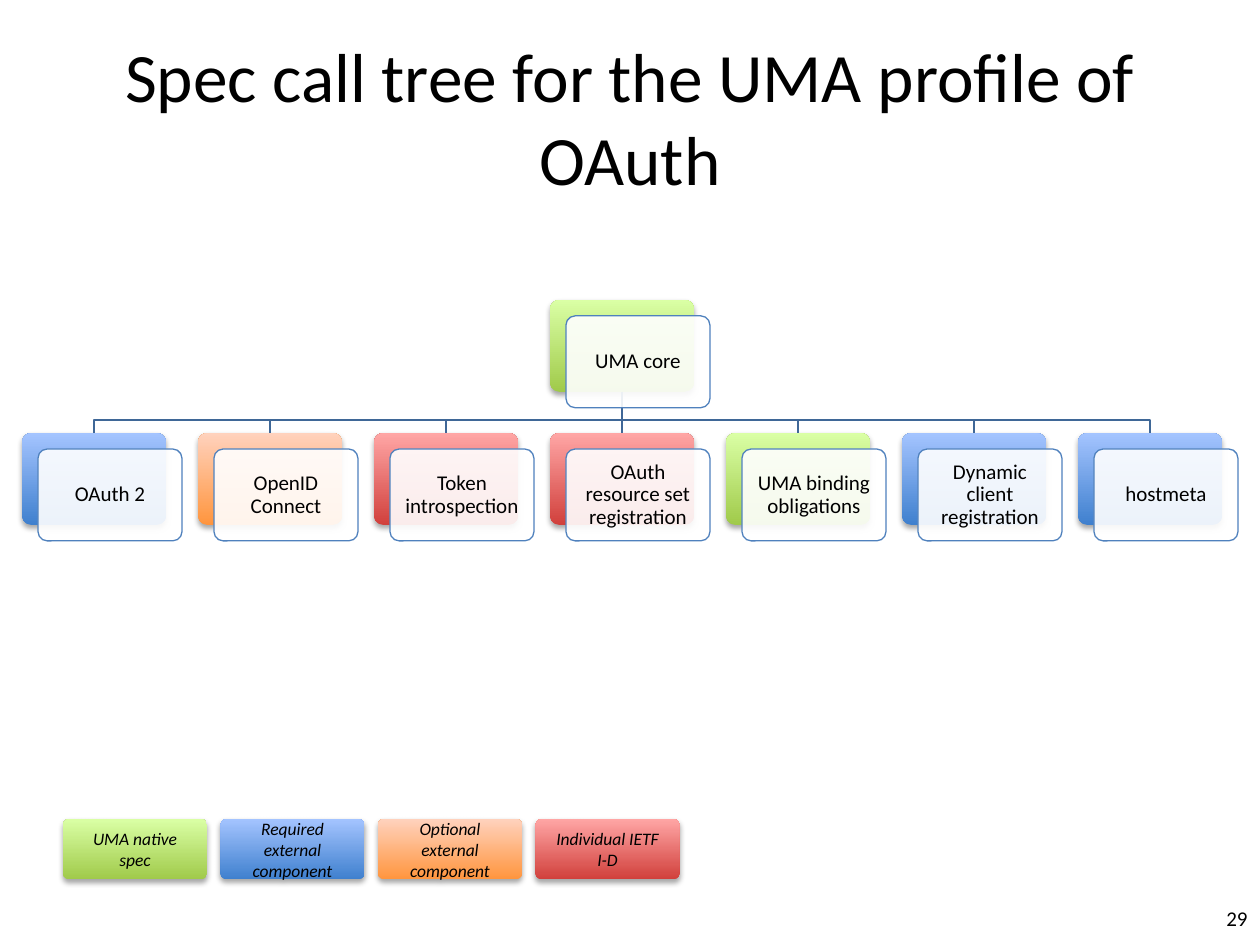
from lxml import etree
from pptx import Presentation
from pptx.dml.color import RGBColor as Rgb
from pptx.enum.shapes import MSO_CONNECTOR as Conn, MSO_SHAPE as Form
from pptx.enum.text import MSO_ANCHOR as Anchor, PP_ALIGN as Align
from pptx.oxml import parse_xml
from pptx.oxml.ns import nsdecls, qn
from pptx.util import Pt

# Content
TITLE = "Spec call tree for the UMA profile of OAuth"
PAGE = "29"
ROOT = ("UMA core", "native")
SPECS = [
    ("OAuth 2", "required"),
    ("OpenID Connect", "optional"),
    ("Token introspection", "draft"),
    ("OAuth resource set registration", "draft"),
    ("UMA binding obligations", "native"),
    ("Dynamic client registration", "required"),
    ("hostmeta", "required"),
]
LEGEND = [
    ("UMA native spec", "native"),
    ("Required external component", "required"),
    ("Optional external component", "optional"),
    ("Individual IETF I-D", "draft"),
]


class Theme:
    font = "Calibri"
    ink, paper = "000000", "FFFFFF"
    line, edge = "3F6797", "4F81BD"
    title, body, key = 39.6, 12, 10
    # Each kind of spec: bottom colour, top colour
    kinds = {
        "native": ("A0CA4A", "DAFFA5"),
        "required": ("3F80CE", "A4C4FF"),
        "optional": ("FF953E", "FFD2BD"),
        "draft": ("D1403C", "FFA6A5"),
    }


# Layout, in points
CARD_W, CARD_H, SHIFT = 82.3, 52.5, 9.1
LEFT, STEP = 12.6, 100.57
ROOT_Y, BUS_Y, SPEC_Y = 171.4, 240, 247.5
KEY_X, KEY_Y, KEY_H, KEY_STEP = 36, 468, 34.5, 90

prs = Presentation()
prs.slide_width, prs.slide_height = Pt(720), Pt(540)
slide = prs.slides.add_slide(prs.slide_layouts[6])
shapes = slide.shapes


def write(shape, text, size=Theme.body, align=Align.CENTER,
          anchor=Anchor.MIDDLE, italic=False, space=None, inset=None):
    frame = shape.text_frame
    frame.word_wrap = True
    frame.vertical_anchor = anchor
    if inset is not None:
        frame.margin_left = frame.margin_right = Pt(inset)
        frame.margin_top = frame.margin_bottom = Pt(inset)
    para = frame.paragraphs[0]
    para.text, para.alignment = text, align
    if space:
        para.line_spacing = space
    font = para.font
    font.name, font.size, font.italic = Theme.font, Pt(size), italic
    font.color.rgb = Rgb.from_string(Theme.ink)


def label(x, y, w, h, text, **style):
    write(shapes.add_textbox(Pt(x), Pt(y), Pt(w), Pt(h)), text, **style)


def card(x, y, h=CARD_H):
    box = shapes.add_shape(Form.ROUNDED_RECTANGLE, Pt(x), Pt(y), Pt(CARD_W), Pt(h))
    box.adjustments[0] = 0.1
    box.shadow.inherit = False
    return box


def tinted(x, y, kind, h=CARD_H):
    """Card with a vertical gradient and a soft shadow."""
    box = card(x, y, h)
    box.line.fill.background()
    box.fill.gradient()
    box.fill.gradient_angle = 90
    for stop, tone in zip(box.fill.gradient_stops, Theme.kinds[kind]):
        stop.color.rgb = Rgb.from_string(tone)
    box._element.spPr.find(qn("a:effectLst")).append(parse_xml(
        f'<a:outerShdw {nsdecls("a")} blurRad="{Pt(3.15)}" dist="{Pt(1.8)}" '
        'dir="5400000" rotWithShape="0"><a:srgbClr val="000000">'
        '<a:alpha val="35000"/></a:srgbClr></a:outerShdw>'))
    return box


def front(x, y, text):
    """See-through white card that holds the name."""
    box = card(x + SHIFT, y + SHIFT)
    box.fill.solid()
    box.fill.fore_color.rgb = Rgb.from_string(Theme.paper)
    tone = box._element.spPr.find(qn("a:solidFill"))[0]
    etree.SubElement(tone, qn("a:alpha")).set("val", "90000")
    stroke(box, Theme.edge)
    write(box, text, space=0.9, inset=4.8)


def stroke(shape, tone):
    shape.line.color.rgb = Rgb.from_string(tone)
    shape.line.width = Pt(0.75)


def link(top, end):
    """Line from the root card down to a spec card."""
    mid = top.left + top.width // 2
    low = top.top + top.height
    goal = end.left + end.width // 2
    if abs(goal - mid) < Pt(1):
        path = shapes.add_connector(Conn.STRAIGHT, mid, low, goal, end.top)
        path.begin_connect(top, 2)
        path.end_connect(end, 0)
        etree.SubElement(path._element.spPr, qn("a:effectLst"))
    else:
        pen = shapes.build_freeform(mid, low)
        pen.add_line_segments(
            [(mid, Pt(BUS_Y)), (goal, Pt(BUS_Y)), (goal, end.top)], close=False)
        path = pen.convert_to_shape()
        path.fill.background()
        path.shadow.inherit = False
    stroke(path, Theme.line)


# Title and page number
label(36, 21.6, 648, 90, TITLE, size=Theme.title)
label(692.6, 514, 27.4, 26, PAGE, align=Align.RIGHT, anchor=Anchor.TOP)

# Call tree: back cards, links, then front cards
root_x = LEFT + len(SPECS) // 2 * STEP
nodes = [(root_x, ROOT_Y, *ROOT)]
nodes += [(LEFT + i * STEP, SPEC_Y, *spec) for i, spec in enumerate(SPECS)]
root, *leaves = [tinted(x, y, kind) for x, y, _, kind in nodes]
for leaf in leaves:
    link(root, leaf)
for x, y, name, _ in nodes:
    front(x, y, name)

# Legend
for i, (name, kind) in enumerate(LEGEND):
    key = tinted(KEY_X + i * KEY_STEP, KEY_Y, kind, KEY_H)
    write(key, name, size=Theme.key, italic=True)

prs.save("out.pptx")
